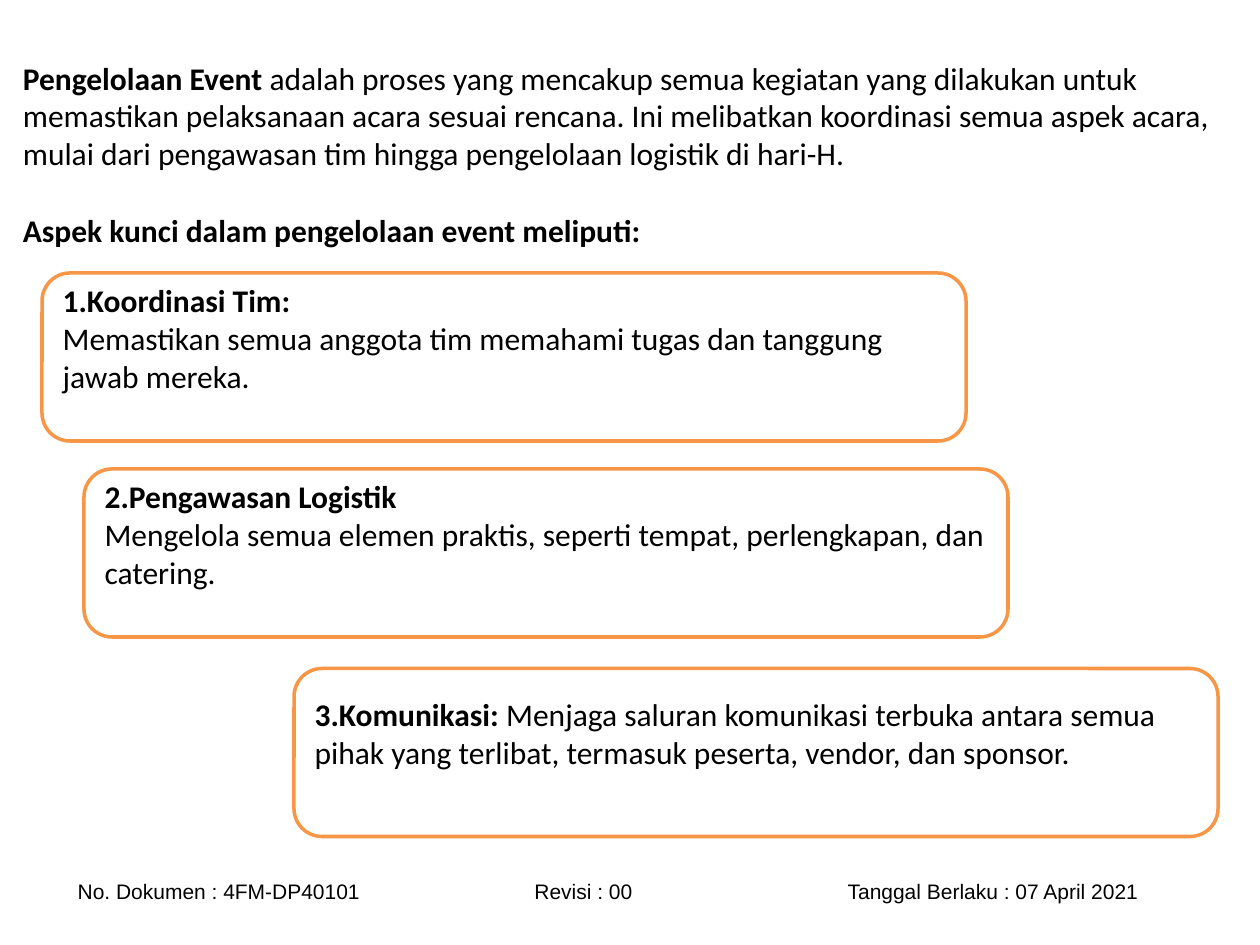
from pptx import Presentation
from pptx.dml.color import RGBColor
from pptx.enum import shapes, text
from pptx.util import Pt

BLACK = RGBColor(0x00, 0x00, 0x00)
WHITE = RGBColor(0xFF, 0xFF, 0xFF)
ORANGE = RGBColor(0xF7, 0x96, 0x46)

BODY_FORMAT = {"name": "Calibri", "size": Pt(18)}
FOOTER_FORMAT = {"name": "Arial", "size": Pt(12)}
BLANK_LINE = 22  # height of one body line

CARD_SIZE = (528, 96)
# Left, top, paragraphs; each paragraph is a list of (text, bold) runs
CARDS = [
    (24, 156, [
        [("1.Koordinasi Tim:", True)],
        [("Memastikan semua anggota tim memahami tugas dan tanggung jawab mereka.", False)],
    ]),
    (48, 268, [
        [("2.Pengawasan Logistik", True)],
        [("Mengelola semua elemen praktis, seperti tempat, perlengkapan, dan catering.", False)],
    ]),
    (168, 382, [
        [("3.Komunikasi: ", True),
         ("Menjaga saluran komunikasi terbuka antara semua pihak yang terlibat, "
          "termasuk peserta, vendor, dan sponsor.", False)],
    ]),
]
INTRO = [
    [("Pengelolaan Event ", True),
     ("adalah proses yang mencakup semua kegiatan yang dilakukan untuk memastikan "
      "pelaksanaan acara sesuai rencana. Ini melibatkan koordinasi semua aspek acara, "
      "mulai dari pengawasan tim hingga pengelolaan logistik di hari-H.", False)],
    [("Aspek kunci dalam pengelolaan event meliputi:", True)],
]
FOOTER = ["No. Dokumen : 4FM-DP40101", "Revisi : 00", "Tanggal Berlaku : 07 April 2021"]
FOOTER_TABS = (261, 440)


def write_paragraphs(frame, paragraphs, font_format, gap=0):
    """Fill a text frame, with a gap between its paragraphs."""
    frame.word_wrap = True
    for index, runs in enumerate(paragraphs):
        paragraph = frame.paragraphs[0] if index == 0 else frame.add_paragraph()
        paragraph.alignment = text.PP_ALIGN.LEFT
        if index and gap:
            paragraph.space_before = Pt(gap)
        for words, bold in runs:
            run = paragraph.add_run()
            run.text = words
            for attribute, value in font_format.items():
                setattr(run.font, attribute, value)
            run.font.bold = bold
            run.font.color.rgb = BLACK


def add_intro(slide, left, top, width, height):
    box = slide.shapes.add_textbox(Pt(left), Pt(top), Pt(width), Pt(height))
    write_paragraphs(box.text_frame, INTRO, BODY_FORMAT, gap=BLANK_LINE)


def add_card(slide, left, top, width, height, paragraphs):
    card = slide.shapes.add_shape(
        shapes.MSO_SHAPE.ROUNDED_RECTANGLE, Pt(left), Pt(top), Pt(width), Pt(height))
    card.shadow.inherit = False
    card.fill.solid()
    card.fill.fore_color.rgb = WHITE
    card.line.color.rgb = ORANGE
    card.line.width = Pt(2)
    frame = card.text_frame
    frame.vertical_anchor = text.MSO_ANCHOR.MIDDLE
    # The text sits half a line above the middle
    frame.margin_bottom = frame.margin_top + Pt(BLANK_LINE)
    write_paragraphs(frame, paragraphs, BODY_FORMAT)


def add_footer(slide, left, top, width, height):
    box = slide.shapes.add_textbox(Pt(left), Pt(top), Pt(width), Pt(height))
    frame = box.text_frame
    frame.margin_left = Pt(30)
    frame.vertical_anchor = text.MSO_ANCHOR.MIDDLE
    # Tab stops carry the second and third entries
    properties = frame.paragraphs[0]._p.get_or_add_pPr()
    tabs = properties.makeelement(
        "{http://schemas.openxmlformats.org/drawingml/2006/main}tabLst", {})
    properties.append(tabs)
    for position in FOOTER_TABS:
        tabs.append(tabs.makeelement(
            tabs.tag.replace("tabLst", "tab"), {"pos": str(Pt(position)), "algn": "l"}))
    write_paragraphs(frame, [[("\t".join(FOOTER), False)]], FOOTER_FORMAT)


def main():
    presentation = Presentation()
    presentation.slide_width, presentation.slide_height = Pt(720), Pt(540)
    slide = presentation.slides.add_slide(presentation.slide_layouts[6])
    add_footer(slide, 14.4, 498, 680, 22)
    add_intro(slide, 6, 30, 720, 378)
    for left, top, paragraphs in CARDS:
        add_card(slide, left, top, *CARD_SIZE, paragraphs)
    presentation.save("out.pptx")


if __name__ == "__main__":
    main()
